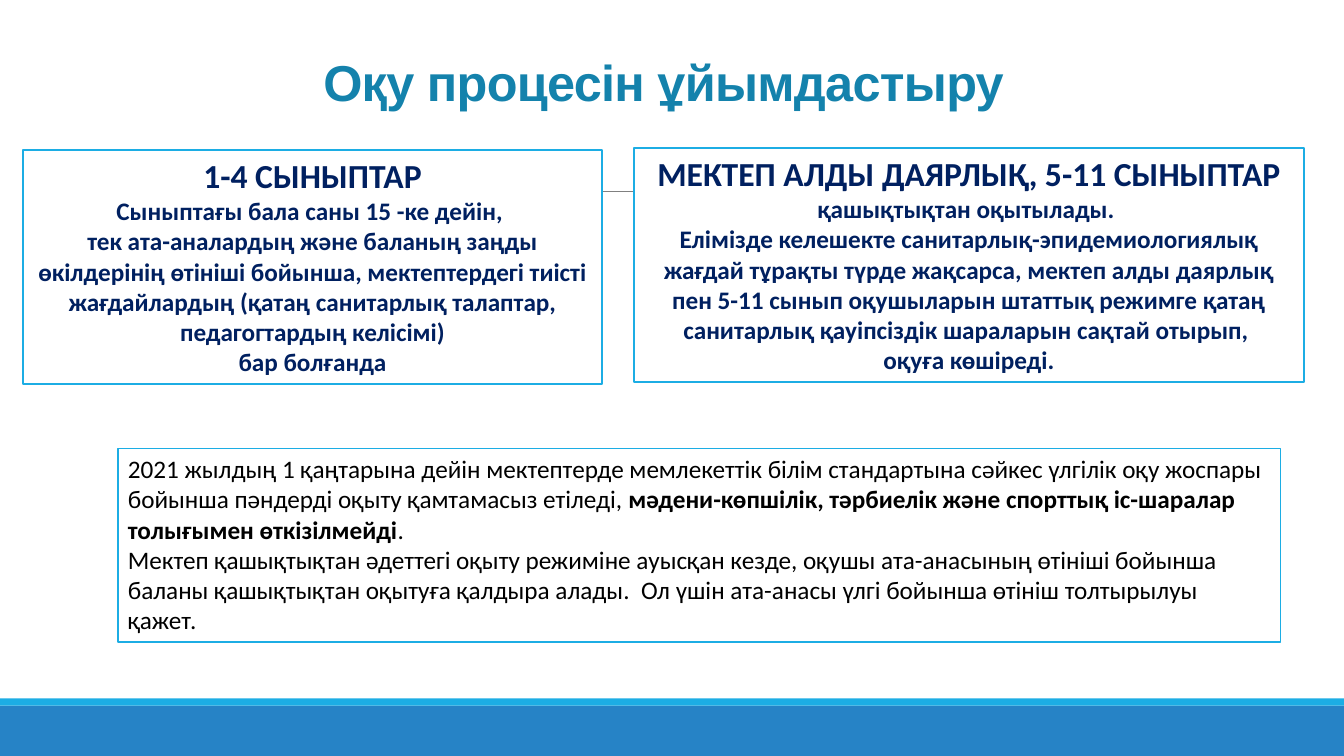
from pptx import Presentation
from pptx.dml.color import RGBColor
from pptx.enum.shapes import MSO_CONNECTOR as Conn, MSO_SHAPE as Kind
from pptx.enum.text import MSO_ANCHOR as Anchor, MSO_AUTO_SIZE as Fit, PP_ALIGN as Align
from pptx.oxml.ns import qn
from pptx.util import Inches, Pt
from lxml.etree import SubElement

NAVY, BLACK, WHITE = "002060", "000000", "FFFFFF"
BLUE, SKY, TEAL, GRAY = "2683C6", "1CADE4", "1482AC", "808080"


def color(code):
    return RGBColor.from_string(code)


class Page:
    def __init__(self, deck):
        self.slide = deck.slides.add_slide(deck.slide_layouts[5])
        self.shapes = self.slide.shapes

    def run(self, para, text, size, ink, bold, font="Calibri"):
        run = para.add_run()
        run.text = text
        run.font.name = font
        run.font.size = Pt(size)
        run.font.bold = bold
        run.font.color.rgb = color(ink)
        return run

    def title(self, text, *area):
        head = self.shapes.title
        head.left, head.top, head.width, head.height = map(Inches, area)
        frame = head.text_frame
        frame.auto_size = Fit.NONE
        frame.word_wrap = True
        frame.vertical_anchor = Anchor.BOTTOM
        para = frame.paragraphs[0]
        para.alignment = Align.CENTER
        para.line_spacing = 0.85
        run = self.run(para, text, 36, TEAL, True, "Arial")
        run.font._element.set("spc", "-50")

    def rect(self, fill, *area):
        box = self.shapes.add_shape(Kind.RECTANGLE, *map(Inches, area))
        box.shadow.inherit = False
        box.fill.solid()
        box.fill.fore_color.rgb = color(fill)
        box.line.fill.background()
        return box

    def rule(self, left, right, top):
        line = self.shapes.add_connector(
            Conn.STRAIGHT, Inches(left), Inches(top), Inches(right), Inches(top))
        line.line.color.rgb = color(GRAY)
        line.line.width = Pt(0.5)
        SubElement(line._element.spPr, qn("a:effectLst"))

    def panel(self, paras, ink, align, *area):
        """Outlined box; each paragraph is a list of (text, size, bold) runs."""
        box = self.rect(WHITE, *area)
        box.line.color.rgb = color(SKY)
        box.line.width = Pt(1.25)
        frame = box.text_frame
        frame.word_wrap = True
        frame.auto_size = Fit.SHAPE_TO_FIT_TEXT
        frame.vertical_anchor = Anchor.TOP
        for i, runs in enumerate(paras):
            para = frame.add_paragraph() if i else frame.paragraphs[0]
            para.alignment = align
            for text, size, bold in runs:
                self.run(para, text, size, ink, bold)

    def card(self, head, lines, *area):
        paras = [[(head, 24, True)]] + [[(line, 18, True)] for line in lines]
        self.panel(paras, NAVY, Align.CENTER, *area)


def main():
    deck = Presentation()
    deck.slide_width, deck.slide_height = Inches(13.33), Inches(7.5)
    page = Page(deck)

    page.rect(BLUE, 0, 7, 13.33, 0.5)
    page.rect(SKY, 0, 6.93, 13.33, 0.07)
    page.rule(1.31, 12.21, 1.9)
    page.title("Оқу процесін ұйымдастыру", 0.23, 0.64, 12.7, 0.52)

    page.card("1-4 СЫНЫПТАР", [
        "Сыныптағы бала саны 15 -ке дейін, ",
        "тек ата-аналардың және баланың заңды өкілдерінің өтініші бойынша, "
        "мектептердегі тиісті жағдайлардың (қатаң санитарлық талаптар, "
        "педагогтардың келісімі)",
        "бар болғанда",
    ], 0.23, 1.49, 5.74, 2.32)
    page.card("МЕКТЕП АЛДЫ ДАЯРЛЫҚ, 5-11 СЫНЫПТАР", [
        "қашықтықтан оқытылады. ",
        "Елімізде келешекте санитарлық-эпидемиологиялық жағдай тұрақты түрде "
        "жақсарса, мектеп алды даярлық пен 5-11 сынып оқушыларын штаттық режимге "
        "қатаң санитарлық қауіпсіздік шараларын сақтай отырып, ",
        "оқуға көшіреді.",
    ], 6.29, 1.47, 6.64, 2.32)
    page.panel([
        [("2021 жылдың 1 қаңтарына дейін мектептерде мемлекеттік білім стандартына "
          "сәйкес үлгілік оқу жоспары бойынша пәндерді оқыту қамтамасыз етіледі, ",
          18, False),
         ("мәдени-көпшілік, тәрбиелік және спорттық іс-шаралар толығымен "
          "өткізілмейді", 18, True),
         (".", 18, False)],
        [("Мектеп қашықтықтан әдеттегі оқыту режиміне ауысқан кезде, оқушы "
          "ата-анасының өтініші бойынша баланы қашықтықтан оқытуға қалдыра алады.  "
          "Ол үшін ата-анасы үлгі бойынша өтініш толтырылуы қажет.", 18, False)],
    ], BLACK, Align.LEFT, 1.17, 4.45, 11.53, 1.92)

    deck.save("out.pptx")


if __name__ == "__main__":
    main()
